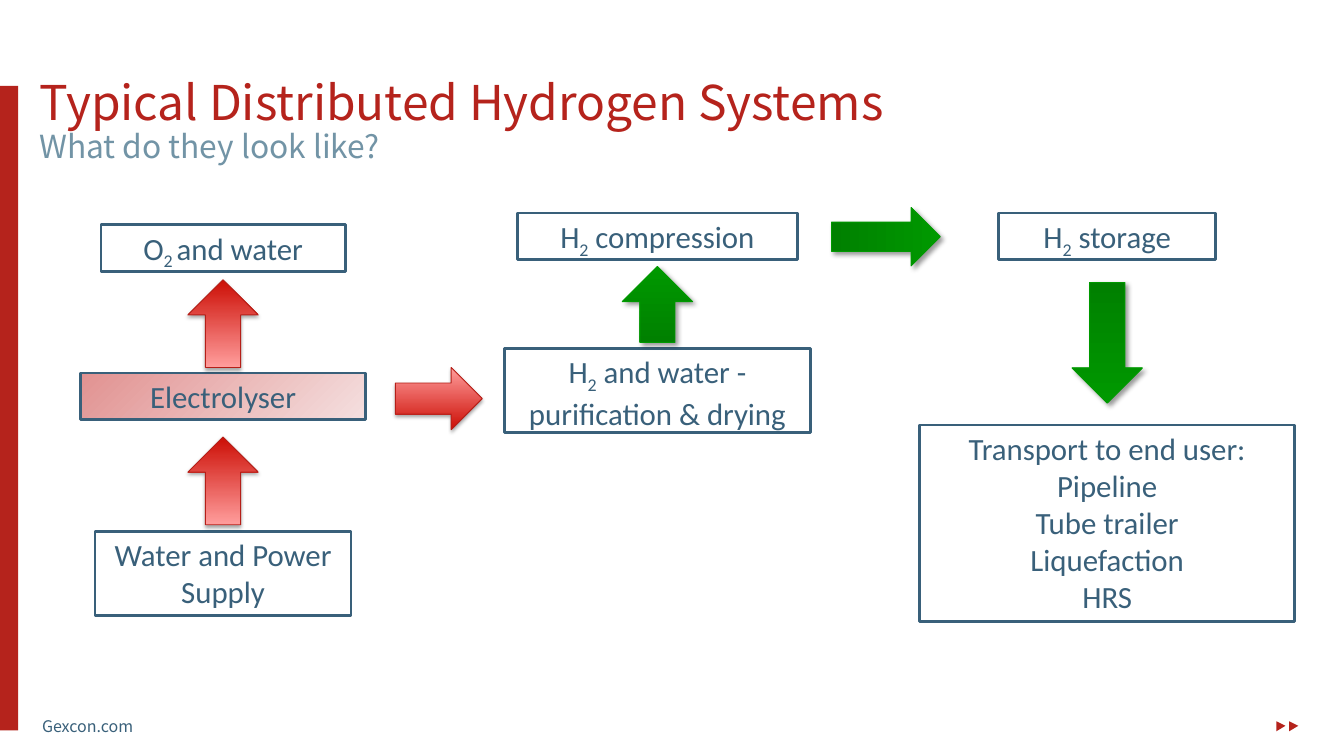
from lxml import etree
from pptx import Presentation
from pptx import util as u
from pptx.dml import color
from pptx.enum import shapes, text
from pptx.oxml import ns

WIDTH, HEIGHT = 14.7, 8.27
RED, NAVY, STEEL = "B5231C", "39607A", "7294A6"
HEADING_FONT, BODY_FONT = "Noto Sans CJK JP", "Calibri"

COLUMNS = {"supply": 2.44, "treatment": 7.19, "delivery": 12.11}
LINE_HEIGHT, BOX_PADDING = 0.41, 0.1

HEADINGS = [
    ("Typical Distributed Hydrogen Systems", 0.43, 0.8, 10.12, 0.58, 37.7, RED),
    ("What do they look like?", 0.43, 1.39, 4.62, 0.5, 25, STEEL),
    ("Gexcon.com", 0.46, 7.84, 1.07, 0.22, 12.6, NAVY),
]

BOXES = [
    ("supply", 4.08, 3.12, 1, [["Electrolyser"]], ("E19291", "F4DFDF")),
    ("supply", 2.46, 2.67, 1, [["O", "2 ", "and water"]], None),
    ("supply", 5.81, 2.8, 2, [["Water and Power Supply"]], None),
    ("treatment", 3.81, 3.35, 2, [["H", "2", " and water - purification & drying"]], None),
    ("treatment", 2.33, 3.06, 1, [["H", "2", " compression"]], None),
    ("delivery", 2.33, 2.37, 1, [["H", "2", " storage"]], None),
    ("delivery", 4.65, 4.1, 5,
     [["Transport to end user:"], ["Pipeline"], ["Tube trailer"], ["Liquefaction"], ["HRS"]], None),
]

STYLES = {
    "red": {"stops": ("CC0E05", "FF9D9C"), "line": "B51F18", "shadow": (35, 3.1, 1.8, 90)},
    "green": {"stops": ("009900", "008000"), "line": "009900", "shadow": (40, 4, 3, 45)},
}
DOWN, RIGHT = shapes.MSO_SHAPE.DOWN_ARROW, shapes.MSO_SHAPE.RIGHT_ARROW
ARROWS = [
    ("red", DOWN, 180, COLUMNS["supply"], 3.54, 0.77, 0.96),
    ("red", DOWN, 180, COLUMNS["supply"], 5.26, 0.77, 0.96),
    ("red", RIGHT, 0, 4.8, 4.36, 0.95, 0.68),
    ("green", DOWN, 180, COLUMNS["treatment"], 3.33, 0.77, 0.83),
    ("green", DOWN, 270, 9.69, 2.59, 0.64, 1.19),
    ("green", DOWN, 0, COLUMNS["delivery"], 3.75, 0.77, 1.32),
]


def rgb(value):
    return color.RGBColor.from_string(value)


def inches(*lengths):
    return [u.Inches(length) for length in lengths]


def paint_gradient(shape, stops, angle):
    shape.fill.gradient()
    shape.fill.gradient_angle = angle
    for stop, value in zip(shape.fill.gradient_stops, stops):
        stop.color.rgb = rgb(value)


def paint_solid(shape, value):
    shape.shadow.inherit = False
    shape.fill.solid()
    shape.fill.fore_color.rgb = rgb(value)
    shape.line.fill.background()


def outline(shape, value, points):
    shape.shadow.inherit = False
    shape.line.color.rgb = rgb(value)
    shape.line.width = u.Pt(points)


def add_span(para, words, font, size, value):
    span = para.add_run()
    span.text = words
    span.font.name = font
    span.font.size = u.Pt(size)
    span.font.color.rgb = rgb(value)
    return span


def add_heading(page, words, left, top, width, height, size, value):
    frame = page.shapes.add_textbox(*inches(left, top, width, height)).text_frame
    frame.word_wrap = True
    frame.margin_left = frame.margin_right = frame.margin_top = frame.margin_bottom = 0
    add_span(frame.paragraphs[0], words, HEADING_FONT, size, value)


def add_box(page, column, top, width, lines, paragraphs, stops):
    height = lines * LINE_HEIGHT + BOX_PADDING
    box = page.shapes.add_shape(
        shapes.MSO_SHAPE.RECTANGLE, *inches(COLUMNS[column] - width / 2, top, width, height))
    outline(box, NAVY, 2.25)
    if stops:
        paint_gradient(box, stops, 315)
    else:
        box.fill.background()
    frame = box.text_frame
    frame.word_wrap = True
    frame.vertical_anchor = text.MSO_ANCHOR.TOP
    for index, parts in enumerate(paragraphs):
        para = frame.add_paragraph() if index else frame.paragraphs[0]
        para.alignment = text.PP_ALIGN.CENTER
        for part in parts:
            span = add_span(para, part, BODY_FONT, 24.3, NAVY)
            if part.strip() == "2":
                span.font._element.set("baseline", "-25000")


def add_shadow(shape, opacity, blur, distance, angle):
    effects = shape._element.spPr.find(ns.qn("a:effectLst"))
    shadow = etree.SubElement(
        effects, ns.qn("a:outerShdw"), blurRad=str(int(u.Pt(blur))),
        dist=str(int(u.Pt(distance))), dir=str(angle * 60000), rotWithShape="0")
    black = etree.SubElement(shadow, ns.qn("a:srgbClr"), val="000000")
    etree.SubElement(black, ns.qn("a:alpha"), val=str(opacity * 1000))


def add_arrow(page, style, kind, rotation, centre, middle, width, height):
    look = STYLES[style]
    arrow = page.shapes.add_shape(
        kind, *inches(centre - width / 2, middle - height / 2, width, height))
    arrow.rotation = rotation
    outline(arrow, look["line"], 0.75)
    paint_gradient(arrow, look["stops"], 90)
    add_shadow(arrow, *look["shadow"])


def add_footer_marks(page):
    for left in (13.96, 14.1):
        outline_path = page.shapes.build_freeform(*inches(left, 7.89))
        outline_path.add_line_segments(
            [inches(left, 8), inches(left + 0.1, 7.94)], close=True)
        paint_solid(outline_path.convert_to_shape(), RED)


def main():
    deck = Presentation()
    deck.slide_width, deck.slide_height = inches(WIDTH, HEIGHT)
    page = deck.slides.add_slide(deck.slide_layouts[6])
    add_footer_marks(page)
    side_bar = page.shapes.add_shape(
        shapes.MSO_SHAPE.RECTANGLE, *inches(0, 0.94, 0.2, 7.05))
    paint_solid(side_bar, RED)
    for heading in HEADINGS:
        add_heading(page, *heading)
    for box in BOXES:
        add_box(page, *box)
    for arrow in ARROWS:
        add_arrow(page, *arrow)
    deck.save("out.pptx")


if __name__ == "__main__":
    main()
